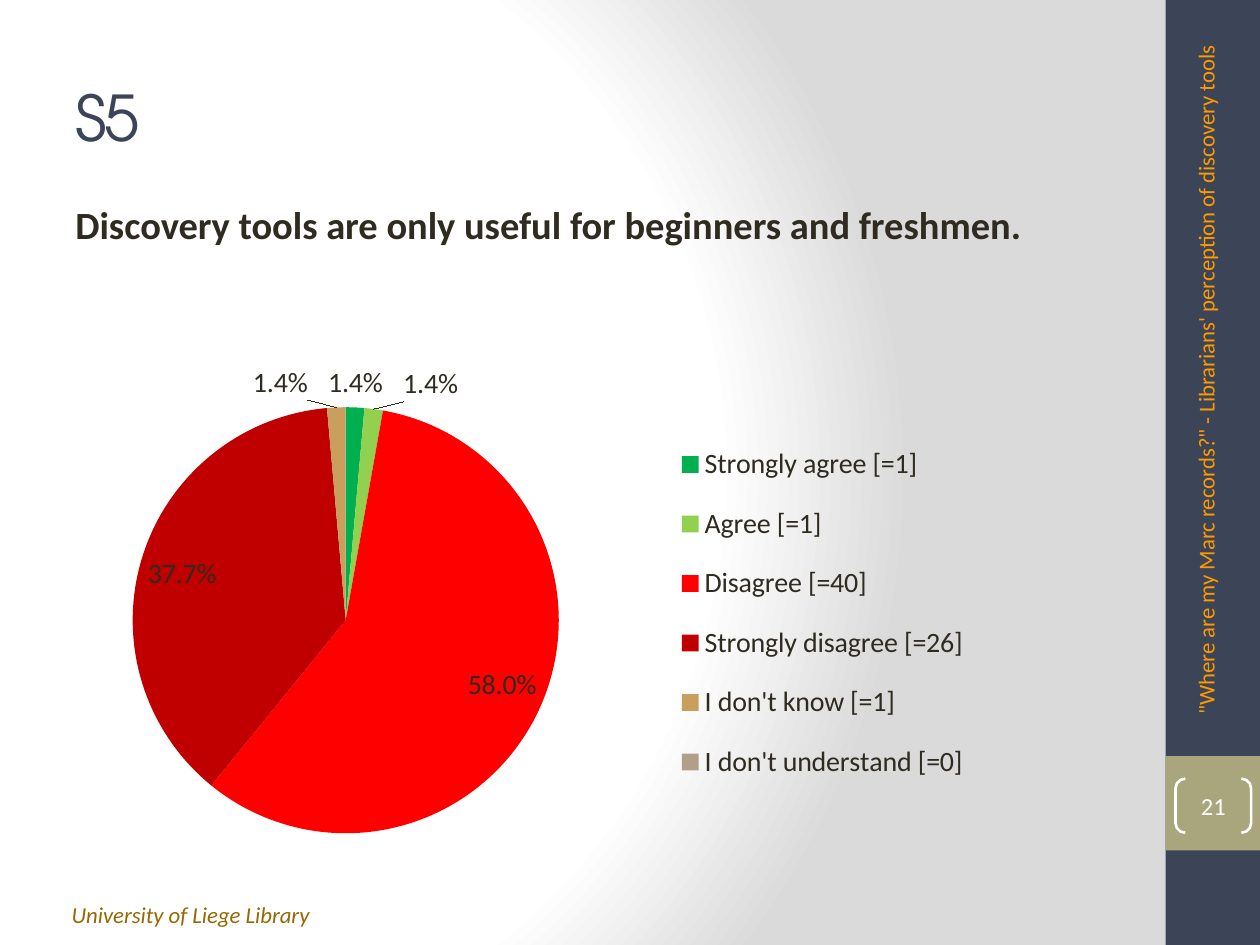
from dataclasses import dataclass

from pptx import Presentation, util as u
from pptx.chart.data import CategoryChartData
from pptx.dml.color import RGBColor
from pptx.enum import chart as charts, shapes, text
from pptx.oxml import parse_xml
from pptx.oxml.ns import nsdecls, qn

WIDTH, HEIGHT = 10, 7.5
SIDEBAR = 92.5


@dataclass(frozen=True)
class Theme:
    """Fonts, type sizes and colours of the slide."""
    body_font: str = "Calibri"
    title_font: str = "TeX Gyre Adventor"
    title: int = 36
    statement: int = 22
    chart: int = 16
    number: int = 14
    small: int = 13
    navy: str = "3C4457"
    olive: str = "A9A57C"
    ink: str = "2F2B20"
    brown: str = "956803"
    orange: str = "FF9900"
    white: str = "FFFFFF"
    grey: str = "DADADA"


THEME = Theme()

ANSWERS = [
    ("Strongly agree [=1]", 0.014, "00B050"),
    ("Agree [=1]", 0.014, "92D050"),
    ("Disagree [=40]", 0.58, "FF0000"),
    ("Strongly disagree [=26]", 0.377, "C00000"),
    ("I don't know [=1]", 0.014, "C89F5D"),
    ("I don't understand [=0]", 0, "B1A089"),
]


def box(left, top, width, height):
    """Turn percentages of the slide into lengths."""
    return (u.Inches(left * WIDTH / 100), u.Inches(top * HEIGHT / 100),
            u.Inches(width * WIDTH / 100), u.Inches(height * HEIGHT / 100))


def style(font, size, color, name=THEME.body_font):
    """Set the size, colour and typeface of a font."""
    font.size, font.name = u.Pt(size), name
    font.color.rgb = RGBColor.from_string(color)


def add_text(slide, place, words, size, color, name=THEME.body_font,
             anchor=text.MSO_ANCHOR.TOP):
    """Add a wrapped one-paragraph text box."""
    shape = slide.shapes.add_textbox(*box(*place))
    frame = shape.text_frame
    frame.word_wrap, frame.vertical_anchor = True, anchor
    frame.text = words
    style(frame.paragraphs[0].runs[0].font, size, color, name)
    return shape


def add_panel(slide, place, color):
    """Add a plain filled rectangle."""
    shape = slide.shapes.add_shape(shapes.MSO_SHAPE.RECTANGLE, *box(*place))
    shape.shadow.inherit = False
    shape.fill.solid()
    shape.fill.fore_color.rgb = RGBColor.from_string(color)
    shape.line.fill.background()


def add_page_number(slide, place, number):
    """Add the page number between brackets."""
    shape = slide.shapes.add_shape(shapes.MSO_SHAPE.DOUBLE_BRACKET, *box(*place))
    shape.shadow.inherit = False
    shape.adjustments[0] = 0.18
    shape.fill.background()
    shape.line.color.rgb = RGBColor.from_string(THEME.white)
    shape.line.width = u.Pt(1.5)
    frame = shape.text_frame
    frame.margin_left = frame.margin_right = frame.margin_top = frame.margin_bottom = 0
    frame.vertical_anchor = text.MSO_ANCHOR.MIDDLE
    frame.text = number
    paragraph = frame.paragraphs[0]
    paragraph.alignment = text.PP_ALIGN.CENTER
    style(paragraph.runs[0].font, THEME.number, THEME.white)


def set_background(slide):
    """Fill the background with a circular gradient."""
    slide.background.fill.solid()
    solid = next(slide.element.iter(qn("a:solidFill")))
    stops = "".join(
        f'<a:gs pos="{share * 1000}"><a:srgbClr val="{color}"/></a:gs>'
        for share, color in ((0, THEME.white), (75, THEME.white), (100, THEME.grey)))
    solid.getparent().replace(solid, parse_xml(
        f'<a:gradFill {nsdecls("a")} rotWithShape="1"><a:gsLst>{stops}</a:gsLst>'
        '<a:path path="circle"><a:fillToRect l="20000" t="50000" r="100000" b="50000"/>'
        '</a:path></a:gradFill>'))


def layout(left, top, width, height, target=""):
    """Make a manual layout from percentages of the chart."""
    modes = '<c:xMode val="edge"/><c:yMode val="edge"/>'
    sizes = "".join(f'<c:{key} val="{percent / 100}"/>'
                    for key, percent in zip("xywh", (left, top, width, height)))
    return parse_xml(f'<c:layout {nsdecls("c")}><c:manualLayout>{target}{modes}{sizes}'
                     '</c:manualLayout></c:layout>')


def add_legend(chart):
    """Add the legend to the right of the pie."""
    chart.has_legend = True
    legend = chart.legend
    legend.position = charts.XL_LEGEND_POSITION.RIGHT
    legend.include_in_layout = False
    style(legend.font, THEME.chart, THEME.ink)
    element = chart.element.find(".//" + qn("c:legend"))
    for old in element.findall(qn("c:layout")):
        element.remove(old)
    element.find(qn("c:legendPos")).addnext(layout(54.7, 20.6, 39, 66.4))


def add_labels(series):
    """Label each slice that holds a value."""
    labels = series.data_labels
    labels.show_value = True
    labels.number_format, labels.number_format_is_linked = "0.0%", False
    labels.position = charts.XL_LABEL_POSITION.BEST_FIT
    style(labels.font, THEME.chart, THEME.ink)
    element = next(series.points[0]._element.iter(qn("c:dLbls")))
    empty = [index for index, answer in enumerate(ANSWERS) if not answer[1]]
    for position, index in enumerate(empty):
        element.insert(position, parse_xml(
            f'<c:dLbl {nsdecls("c")}><c:idx val="{index}"/><c:delete val="1"/></c:dLbl>'))


def add_pie(slide, place):
    """Add the pie chart of the answers."""
    names, values, colors = zip(*ANSWERS)
    data = CategoryChartData(number_format="0.0%")
    data.categories = names
    data.add_series("Series 1", values)
    chart = slide.shapes.add_chart(charts.XL_CHART_TYPE.PIE, *box(*place), data).chart
    chart.has_title = False
    style(chart.font, THEME.chart, THEME.ink)
    plot = chart.plots[0]
    plot.vary_by_categories = True
    for index, color in enumerate(colors):
        fill = plot.series[0].points[index].format.fill
        fill.solid()
        fill.fore_color.rgb = RGBColor.from_string(color)
    add_labels(plot.series[0])
    add_legend(chart)
    area = chart.element.find(".//" + qn("c:plotArea"))
    for old in area.findall(qn("c:layout")):
        area.remove(old)
    area.insert(0, layout(6.7, 11.2, 41.7, 87.6, '<c:layoutTarget val="inner"/>'))


def main():
    """Build the slide and save it."""
    presentation = Presentation()
    presentation.slide_width, presentation.slide_height = u.Inches(WIDTH), u.Inches(HEIGHT)
    slide = presentation.slides.add_slide(presentation.slide_layouts[6])
    set_background(slide)
    add_panel(slide, (SIDEBAR, 0, 100 - SIDEBAR, 100), THEME.navy)
    add_panel(slide, (SIDEBAR, 80, 100 - SIDEBAR, 10), THEME.olive)
    footer = add_text(slide, (4.7, 94.67, 53.2, 4.27), "University of Liege Library",
                      THEME.small, THEME.brown)
    footer.text_frame.paragraphs[0].runs[0].font.italic = True
    title = add_text(slide, (5, 4, 83.3, 16.67), "S5", THEME.title, THEME.navy,
                     THEME.title_font, text.MSO_ANCHOR.MIDDLE)
    title.text_frame.paragraphs[0].runs[0].font._element.set("spc", "-100")
    statement = add_text(slide, (5, 20.6, 83.3, 72.67),
                         "Discovery tools are only useful for beginners and freshmen.",
                         THEME.statement, THEME.ink)
    statement.text_frame.paragraphs[0].runs[0].font.bold = True
    add_page_number(slide, (93.3, 82.4, 6, 5.73), "21")
    heading = add_text(slide, (68.3, 37.2, 55.6, 5.33),
                       "\"Where are my Marc records?\" - Librarians' perception of discovery tools",
                       THEME.small, THEME.orange)
    heading.rotation = 270
    add_pie(slide, (5.1, 32.13, 81.1, 60.93))
    presentation.save("out.pptx")


if __name__ == "__main__":
    main()
